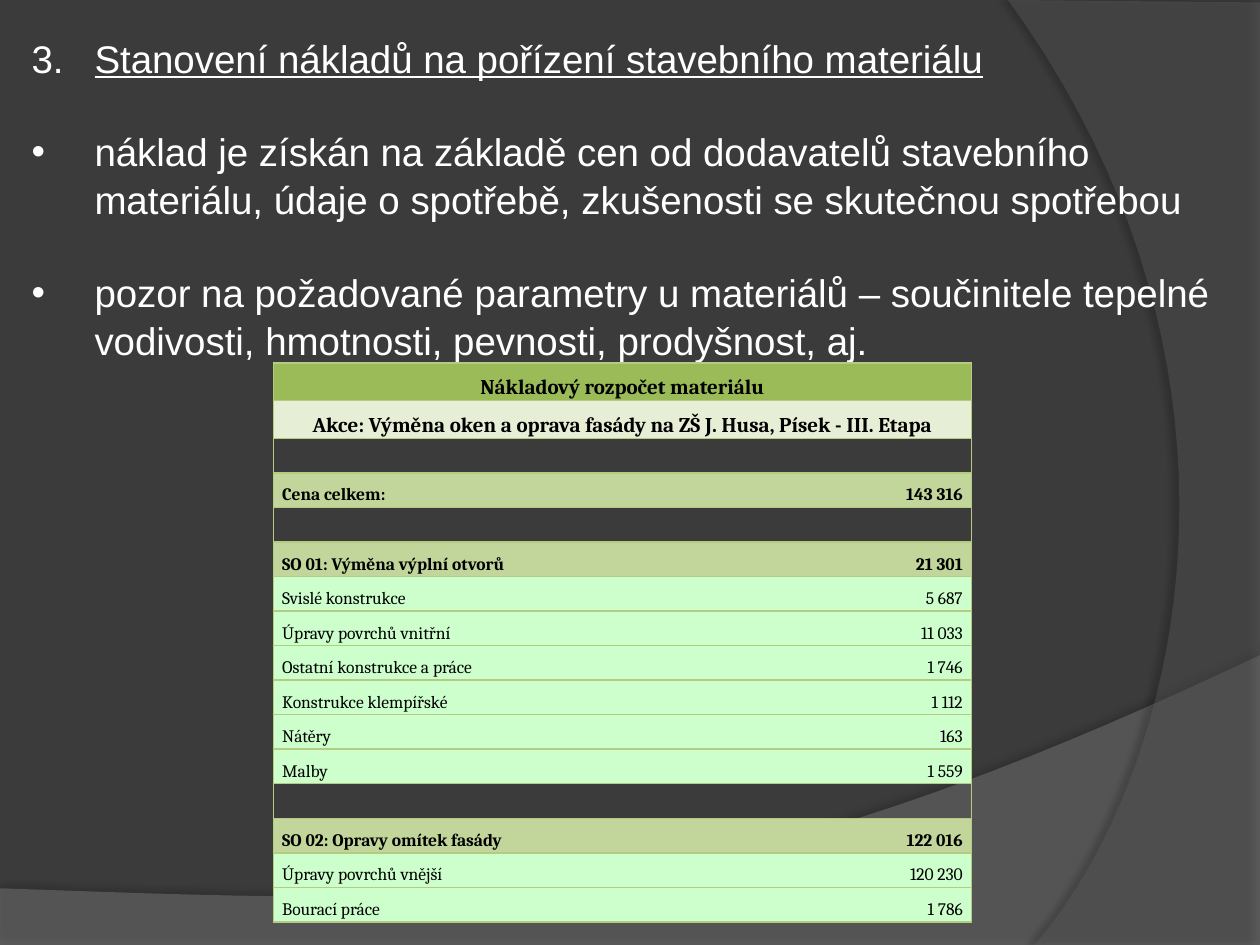
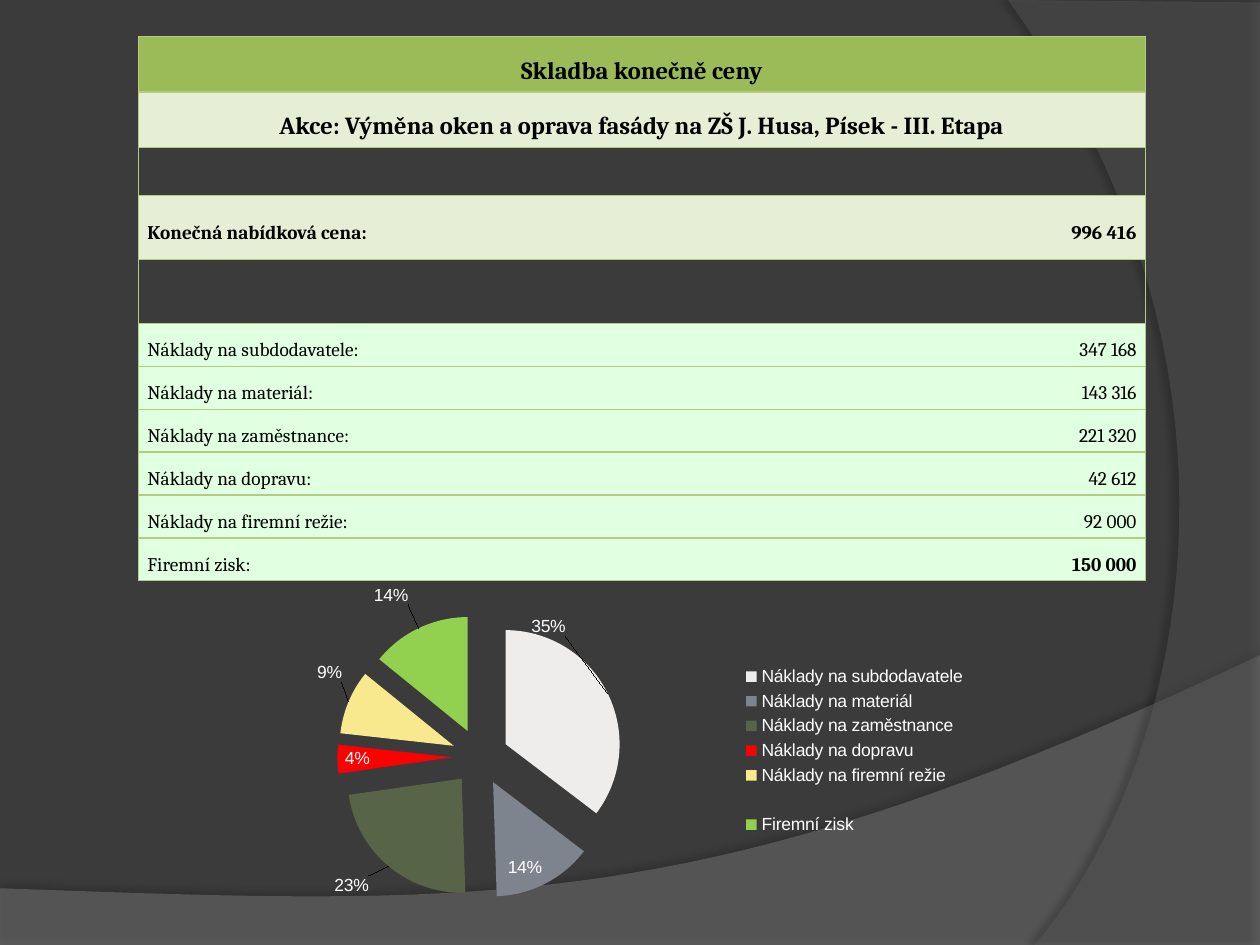
import pptx
import pptx.chart.data
import pptx.dml.color
import pptx.enum.chart
import pptx.enum.text
import pptx.oxml
import pptx.oxml.ns
import pptx.util

RGB = pptx.dml.color.RGBColor
ALIGN = pptx.enum.text.PP_ALIGN
ANCHOR = pptx.enum.text.MSO_ANCHOR
DARK = RGB(0x3B, 0x3B, 0x3B)
BAND = RGB(0x7F, 0x7F, 0x7F)
ARC = RGB(0x5E, 0x5E, 0x5E)
WHITE = RGB(0xFF, 0xFF, 0xFF)
BLACK = RGB(0, 0, 0)
RULE = RGB(0xB3, 0xCC, 0x82)
HEAD = RGB(0x9B, 0xBB, 0x59)
PALE = RGB(0xE6, 0xEE, 0xD5)
OLIVE = RGB(0xC2, 0xD6, 0x9B)
MINT = RGB(0xCC, 0xFF, 0xCC)
LIGHT = RGB(0xE1, 0xFF, 0xE1)
GREY = RGB(0xEE, 0xED, 0xEC)
STEEL = RGB(0x7E, 0x84, 0x8D)
MOSS = RGB(0x57, 0x64, 0x48)
RED = RGB(0xFF, 0, 0)
CREAM = RGB(0xF9, 0xE9, 0x8E)
LIME = RGB(0x92, 0xD0, 0x50)

SANS, SERIF = "Arial", "Cambria"
COLS, ROWS = 10, 7.5          # slide grid, one inch per unit
NO_STYLE = "{2D5ABB26-0587-4C30-8999-92F81FD0307C}"
ACTION = "Akce: Výměna oken a oprava fasády na ZŠ J. Husa, Písek - III. Etapa"


def grid(*units):
    """Turn grid units into lengths."""
    return [pptx.util.Inches(u) for u in units]


def node(xml, space="a"):
    """Make an element, declaring its namespace on the outer tag."""
    tag, rest = xml[:xml.index(":") + 1], xml[xml.index(":") + 1:]
    cut = min(rest.index(c) for c in " />" if c in rest)
    return pptx.oxml.parse_xml(
        tag + rest[:cut] + " " + pptx.oxml.ns.nsdecls(space) + rest[cut:])


def write(para, text, size, font, color, bold=None, line=None):
    """Add one styled run."""
    run = para.add_run()
    run.text = text
    run.font.size = pptx.util.Pt(size)
    run.font.name = font
    run.font.color.rgb = color
    run.font.bold = bold
    run.font.underline = line


# ---- shared backdrop ----

def curve(start, one, two, end, steps=40):
    """Points along a cubic curve."""
    for i in range(steps + 1):
        t = i / steps
        s = 1 - t
        yield tuple(s**3 * a + 3 * s * s * t * b + 3 * s * t * t * c + t**3 * d
                    for a, b, c, d in zip(start, one, two, end))


def wave(slide, master, points, color, alpha, shade, dist, angle):
    """Draw a translucent outline with a shadow and keep it on the master."""
    points = [grid(*p) for p in points]
    pen = slide.shapes.build_freeform(*points[0])
    pen.add_line_segments(points[1:])
    shape = pen.convert_to_shape()
    shape.fill.solid()
    shape.fill.fore_color.rgb = color
    shape.line.fill.background()
    props = shape._element.spPr
    tone = props.find(".//" + pptx.oxml.ns.qn("a:solidFill"))[0]
    tone.append(node(f'<a:alpha val="{alpha * 1000}"/>'))
    props.append(node(
        f'<a:effectLst><a:outerShdw blurRad="50800" dist="{pptx.util.Pt(dist)}" '
        f'dir="{angle * 60000}" rotWithShape="0"><a:srgbClr val="000000">'
        f'<a:alpha val="{shade * 1000}"/></a:srgbClr></a:outerShdw></a:effectLst>'))
    return shape._element


def backdrop(slide, master):
    """Dark ground with a wave at the foot and an arc on the right."""
    master.background.fill.solid()
    master.background.fill.fore_color.rgb = DARK
    foot = [(0, ROWS), (COLS, ROWS),
            *curve((COLS, 5.2), (5.59, 7.29), (3.91, 7.19), (0, 7.05))]
    side = [(COLS, 0.02), (COLS, ROWS),
            *curve((8.21, ROWS), (9.35, 6.19), (10.18, 3), (8, 0))]
    parts = (wave(slide, master, foot, BAND, 45, 35, 3.5, 270),
             wave(slide, master, side, ARC, 40, 45, 4, 180))
    for spot, part in enumerate(parts, 2):
        master.shapes.element.insert(spot, part)


# ---- text ----

def hang(para, mark=None):
    """Hanging indent, with or without a bullet."""
    props = para._p.get_or_add_pPr()
    indent = pptx.util.Inches(0.5)
    props.set("marL", str(indent))
    props.set("indent", str(-indent))
    props.append(node(f'<a:buChar char="{mark}"/>' if mark else "<a:buNone/>"))
    para.alignment = ALIGN.LEFT
    para.line_spacing = 1.04


def place(holder, box):
    """Put a placeholder in its box and ready its text frame."""
    holder.left, holder.top, holder.width, holder.height = grid(*box)
    frame = holder.text_frame
    frame.word_wrap = True
    frame.auto_size = pptx.enum.text.MSO_AUTO_SIZE.NONE
    frame.vertical_anchor = ANCHOR.TOP
    return frame


def lesson(slide, box, number, title, points):
    """Numbered title above a bulleted list."""
    left, top, width, height = box
    drop = 0.74
    para = place(slide.shapes.title, (left, top, width, drop)).paragraphs[0]
    hang(para)
    write(para, number + "\t", 22, SANS, WHITE)
    write(para, title, 22, SANS, WHITE, line=True)
    frame = place(slide.placeholders[1], (left, top + drop, width, height - drop))
    for i, text in enumerate(points):
        para = frame.add_paragraph() if i else frame.paragraphs[0]
        hang(para, "•")
        para.space_before = pptx.util.Pt(26 if i else 0)
        write(para, text, 22, SANS, WHITE)


# ---- tables ----

def border(cell, sides):
    """Rule the given sides of a cell."""
    props = cell._tc.get_or_add_tcPr()
    for side in sides:
        props.append(node(f'<a:ln{side} w="12700"><a:solidFill>'
                          f'<a:srgbClr val="{RULE}"/></a:solidFill></a:ln{side}>'))


def fill(cell, text, size, color, bold, align, sides):
    """Style one cell and write its text."""
    border(cell, sides)
    cell.margin_left = cell.margin_right = pptx.util.Inches(0.07)
    cell.margin_top = cell.margin_bottom = 0
    cell.vertical_anchor = ANCHOR.MIDDLE
    if color is None:
        cell.fill.background()
    else:
        cell.fill.solid()
        cell.fill.fore_color.rgb = color
    para = cell.text_frame.paragraphs[0]
    if text:
        para.alignment = align
        para.line_spacing = 1.5
        write(para, text, size, SERIF, BLACK, bold)
    else:
        para._p.append(node(f'<a:endParaRPr sz="{size * 100}"/>'))


def budget(slide, box, split, heights, sizes, heads, rows):
    """Two merged headings over rows of (label, value, colour, bold, bold)."""
    count = len(heads) + len(rows)
    table = slide.shapes.add_table(count, 2, *grid(*box)).table
    table.first_row = table.horz_banding = False
    table._tbl.tblPr.find(pptx.oxml.ns.qn("a:tableStyleId")).text = NO_STYLE
    for col, width in zip(table.columns, grid(split, box[2] - split)):
        col.width = width
    for row, height in zip(table.rows, grid(*heights)):
        row.height = height
    for i, (text, color) in enumerate(zip(heads, (HEAD, PALE))):
        table.cell(i, 0).merge(table.cell(i, 1))
        fill(table.cell(i, 0), text, sizes[0], color, True, ALIGN.CENTER, "LRTB")
        fill(table.cell(i, 1), "", sizes[1], None, False, None, "RTB")
    for i, (label, value, color, *bold) in enumerate(rows, len(heads)):
        fill(table.cell(i, 0), label, sizes[1], color, bold[0], ALIGN.LEFT, "LTB")
        fill(table.cell(i, 1), value, sizes[1], color, bold[-1], ALIGN.RIGHT, "RTB")


# ---- chart ----

def label(spot, shift):
    """Percent label moved off the slice, or a deleted one."""
    if shift is None:
        body = '<c:delete val="1"/>'
    else:
        x, y = shift
        shows = "".join(f'<c:show{n} val="{int(n == "Percent")}"/>' for n in
                        ("LegendKey", "Val", "CatName", "SerName", "Percent", "BubbleSize"))
        body = (f'<c:layout><c:manualLayout><c:x val="{x}"/><c:y val="{y}"/>'
                f'</c:manualLayout></c:layout><c:dLblPos val="outEnd"/>{shows}')
    return node(f'<c:dLbl><c:idx val="{spot}"/>{body}</c:dLbl>', "c")


def pie(slide, box, slices, shifts):
    """Exploded pie of (name, share, colour), legend on the right."""
    data = pptx.chart.data.CategoryChartData()
    data.categories = [name for name, _, _ in slices]
    data.add_series("Series 1", [share for _, share, _ in slices])
    chart = slide.shapes.add_chart(
        pptx.enum.chart.XL_CHART_TYPE.PIE, *grid(*box), data).chart
    chart.has_title = False
    chart.font.size = pptx.util.Pt(10)
    chart.font.name = SANS
    chart.font.color.rgb = WHITE
    chart.has_legend = True
    chart.legend.position = pptx.enum.chart.XL_LEGEND_POSITION.RIGHT
    chart.legend.include_in_layout = False
    plot = chart.plots[0]
    plot.vary_by_categories = True
    series = plot.series[0]

    # slices
    for i, (_, _, color) in enumerate(slices):
        look = series.points[i].format
        look.line.fill.background()
        if color is None:
            look.fill.background()
        else:
            look.fill.solid()
            look.fill.fore_color.rgb = color
    name = series._element.find(pptx.oxml.ns.qn("c:tx"))
    name.addnext(node('<c:explosion val="25"/>', "c"))

    # labels
    labels = series.data_labels
    labels.show_percentage = True
    labels.show_value = False
    labels.position = pptx.enum.chart.XL_LABEL_POSITION.INSIDE_END
    for order, (spot, shift) in enumerate(shifts.items()):
        labels._element.insert(order, label(spot, shift))

    # plot area
    area = plot._element.getparent()
    for old in area.findall(pptx.oxml.ns.qn("c:layout")):
        area.remove(old)
    sizes = "".join(f'<c:{k} val="{v}"/>' for k, v in
                    zip("xywh", (0.07, 0.2, 0.54, 0.69)))
    area.insert(0, node(
        '<c:layout><c:manualLayout><c:layoutTarget val="inner"/>'
        '<c:xMode val="edge"/><c:yMode val="edge"/>'
        f'{sizes}</c:manualLayout></c:layout>', "c"))


# ---- slides ----

def cost(slide):
    """Cost of building material."""
    lesson(slide, (0.15, 0.21, 9.61, 2.69), "3. ",
           "Stanovení nákladů na pořízení stavebního materiálu",
           ["náklad je získán na základě cen od dodavatelů stavebního materiálu, "
            "údaje o spotřebě, zkušenosti se skutečnou spotřebou",
            "pozor na požadované parametry u materiálů – součinitele tepelné "
            "vodivosti, hmotnosti, pevnosti, prodyšnost, aj."])
    gap = ("", "", None, False)
    rows = [gap, ("Cena celkem:", "143 316", OLIVE, True),
            gap, ("SO 01: Výměna výplní otvorů", "21 301", OLIVE, True),
            ("Svislé konstrukce", "5 687", MINT, False),
            ("Úpravy povrchů vnitřní", "11 033", MINT, False),
            ("Ostatní konstrukce a práce", "1 746", MINT, False),
            ("Konstrukce klempířské", "1 112", MINT, False),
            ("Nátěry", "163", MINT, False),
            ("Malby", "1 559", MINT, False),
            gap, ("SO 02: Opravy omítek fasády", "122 016", OLIVE, True),
            ("Úpravy povrchů vnější", "120 230", MINT, False),
            ("Bourací práce", "1 786", MINT, False)]
    high, head = 4.44, 0.3
    heights = [head] * 2 + [(high - 2 * head) / len(rows)] * len(rows)
    budget(slide, (2.17, 2.88, 5.54, high), 3.66, heights, (12, 10),
           ("Nákladový rozpočet materiálu", ACTION), rows)


def price(slide):
    """Make-up of the final price."""
    parts = [("Náklady na subdodavatele", "347 168", 35, GREY),
             ("Náklady na materiál", "143 316", 14, STEEL),
             ("Náklady na zaměstnance", "221 320", 23, MOSS),
             ("Náklady na dopravu", "42 612", 4, RED),
             ("Náklady na firemní režie", "92 000", 9, CREAM),
             ("Firemní zisk", "150 000", 14, LIME)]
    gap = ("", "", None, False)
    rows = [gap, ("Konečná nabídková cena:", "996 416", PALE, True), gap]
    rows += [(name + ":", sum_, LIGHT, False, name == "Firemní zisk")
             for name, sum_, _, _ in parts]
    heights = [0.44] * 2 + [0.38] + [0.51] * 2 + [0.34] * len(parts)
    budget(slide, (1.1, 0.29, 7.99, 4.33), 5.69, heights, (14, 11),
           ("Skladba konečně ceny", ACTION), rows)
    slices = [(name, share, color) for name, _, share, color in parts]
    void = ("", None, None)
    pie(slide, (1.77, 4.22, 6, 3.28), [void, *slices[:-1], void, slices[-1]],
        {0: None, 1: (-0.11, -0.13), 3: (-0.02, 0.01), 5: (0, -0.04),
         6: None, 7: (-0.01, -0.04)})


def main():
    deck = pptx.Presentation()
    deck.slide_width, deck.slide_height = grid(COLS, ROWS)
    first = deck.slides.add_slide(deck.slide_layouts[1])
    backdrop(first, deck.slide_master)
    cost(first)
    price(deck.slides.add_slide(deck.slide_layouts[6]))
    deck.save("out.pptx")


if __name__ == "__main__":
    main()
